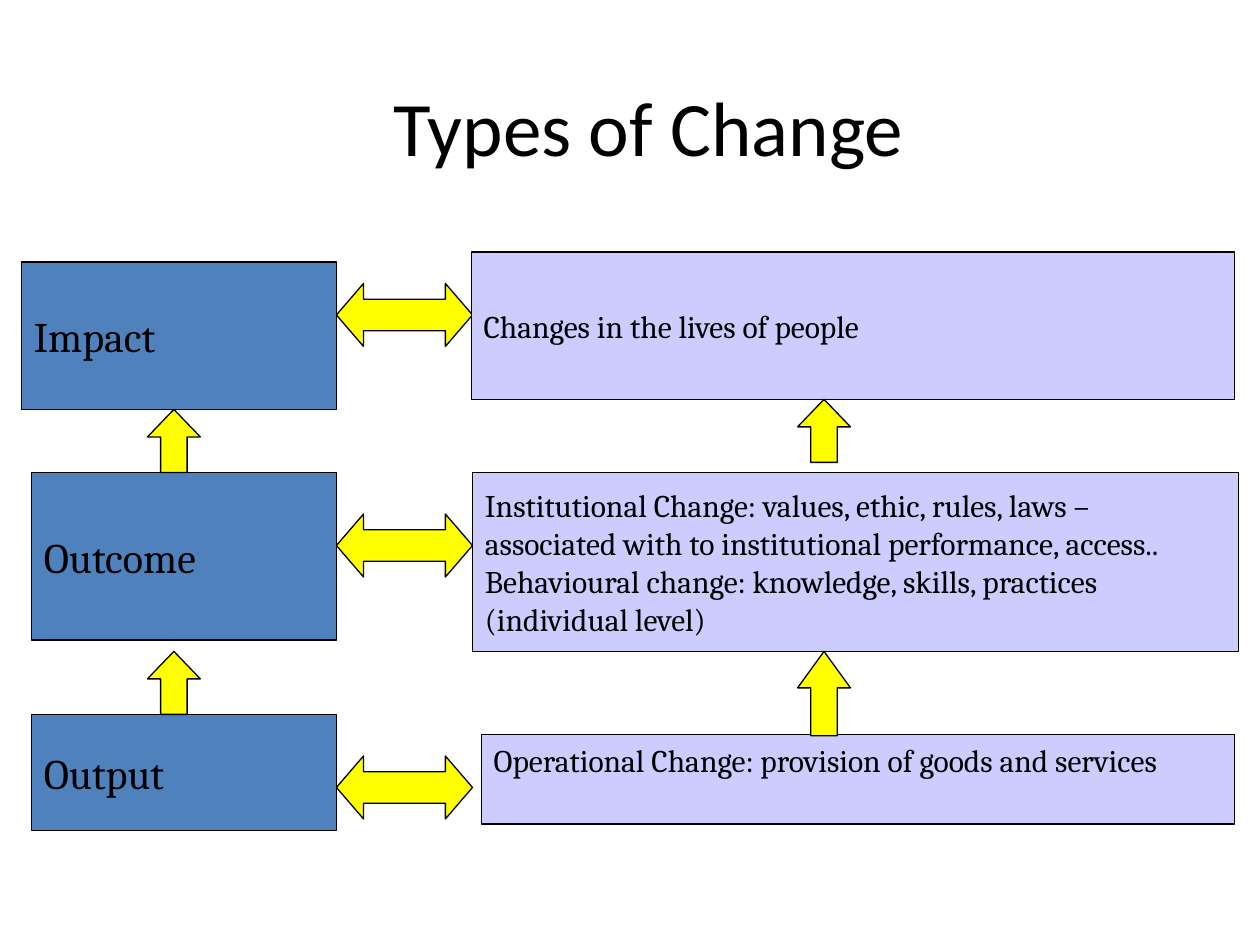
import pptx
import pptx.util
import pptx.dml.color
import pptx.enum.shapes
import pptx.enum.text
from dataclasses import dataclass

Inches = pptx.util.Inches
Pt = pptx.util.Pt
Shape = pptx.enum.shapes.MSO_SHAPE
Anchor = pptx.enum.text.MSO_ANCHOR
Align = pptx.enum.text.PP_ALIGN


@dataclass(frozen=True)
class Theme:
    ink: str = "000000"
    level: str = "4F81BD"
    change: str = "CCCCFF"
    arrow: str = "FFFF00"
    title_font: str = "Calibri"
    body_font: str = "Cambria"
    title_size: int = 44
    level_size: int = 24
    change_size: int = 18
    line: float = 0.75


THEME = Theme()
ARROW_WIDTH = 0.42
LINK_LEFT, LINK_WIDTH, LINK_HEIGHT = 2.67, 1.08, 0.5

# Each row: level name, its box, the changes it stands for, their box, anchor, link top
ROWS = [
    ("Impact", (0.17, 2.08, 2.5, 1.17),
     ["Changes in the lives of people"],
     (3.74, 2, 6.06, 1.17), Anchor.MIDDLE, 2.25),
    ("Outcome", (0.25, 3.75, 2.42, 1.33),
     ["Institutional Change: values, ethic, rules, laws – associated with to "
      "institutional performance, access..",
      "Behavioural change: knowledge, skills, practices (individual level)"],
     (3.75, 3.75, 6.08, 1.42), Anchor.MIDDLE, 4.08),
    ("Output", (0.25, 5.67, 2.42, 0.92),
     ["Operational Change: provision of goods and services"],
     (3.82, 5.83, 5.98, 0.71), Anchor.TOP, 6),
]

# Left, top, height and head length of each upward arrow
RISES = [
    (1.17, 5.17, 0.5, 0.52),
    (1.17, 3.25, 0.5, 0.52),
    (6.33, 5.17, 0.67, 0.69),
    (6.33, 3.17, 0.5, 0.52),
]


def color(value):
    return pptx.dml.color.RGBColor.from_string(value)


def write_text(shape, lines, *, font=THEME.body_font, size, align=Align.LEFT,
               anchor=Anchor.MIDDLE):
    frame = shape.text_frame
    frame.word_wrap = True
    frame.vertical_anchor = anchor
    for index, line in enumerate(lines):
        para = frame.add_paragraph() if index else frame.paragraphs[0]
        para.alignment = align
        span = para.add_run()
        span.text = line
        span.font.name = font
        span.font.size = Pt(size)
        span.font.color.rgb = color(THEME.ink)


def add_outlined(page, kind, box, fill):
    shape = page.shapes.add_shape(kind, *map(Inches, box))
    shape.shadow.inherit = False
    shape.fill.solid()
    shape.fill.fore_color.rgb = color(fill)
    shape.line.color.rgb = color(THEME.ink)
    shape.line.width = Pt(THEME.line)
    return shape


def add_arrow(page, kind, box, head):
    arrow = add_outlined(page, kind, box, THEME.arrow)
    arrow.adjustments[0] = 0.5
    arrow.adjustments[1] = head


def add_title(page, box):
    title = page.shapes.add_textbox(*map(Inches, box))
    write_text(title, ["Types of Change"], font=THEME.title_font,
               size=THEME.title_size, align=Align.CENTER)


def add_row(page, level, level_box, changes, change_box, anchor, link_top):
    """Place a level, the changes it stands for and the two-way arrow between."""
    level_shape = add_outlined(page, Shape.RECTANGLE, level_box, THEME.level)
    write_text(level_shape, [level], size=THEME.level_size)
    add_arrow(page, Shape.LEFT_RIGHT_ARROW,
              (LINK_LEFT, link_top, LINK_WIDTH, LINK_HEIGHT), 0.43)
    change_shape = add_outlined(page, Shape.RECTANGLE, change_box, THEME.change)
    write_text(change_shape, changes, size=THEME.change_size, anchor=anchor)


def main():
    deck = pptx.Presentation()
    deck.slide_width, deck.slide_height = Inches(10), Inches(7.5)
    page = deck.slides.add_slide(deck.slide_layouts[6])
    add_title(page, (0.9, 0.58, 8.5, 0.83))
    for row in ROWS:
        add_row(page, *row)
    for left, top, height, head in RISES:
        add_arrow(page, Shape.UP_ARROW, (left, top, ARROW_WIDTH, height), head)
    deck.save("out.pptx")


if __name__ == "__main__":
    main()
